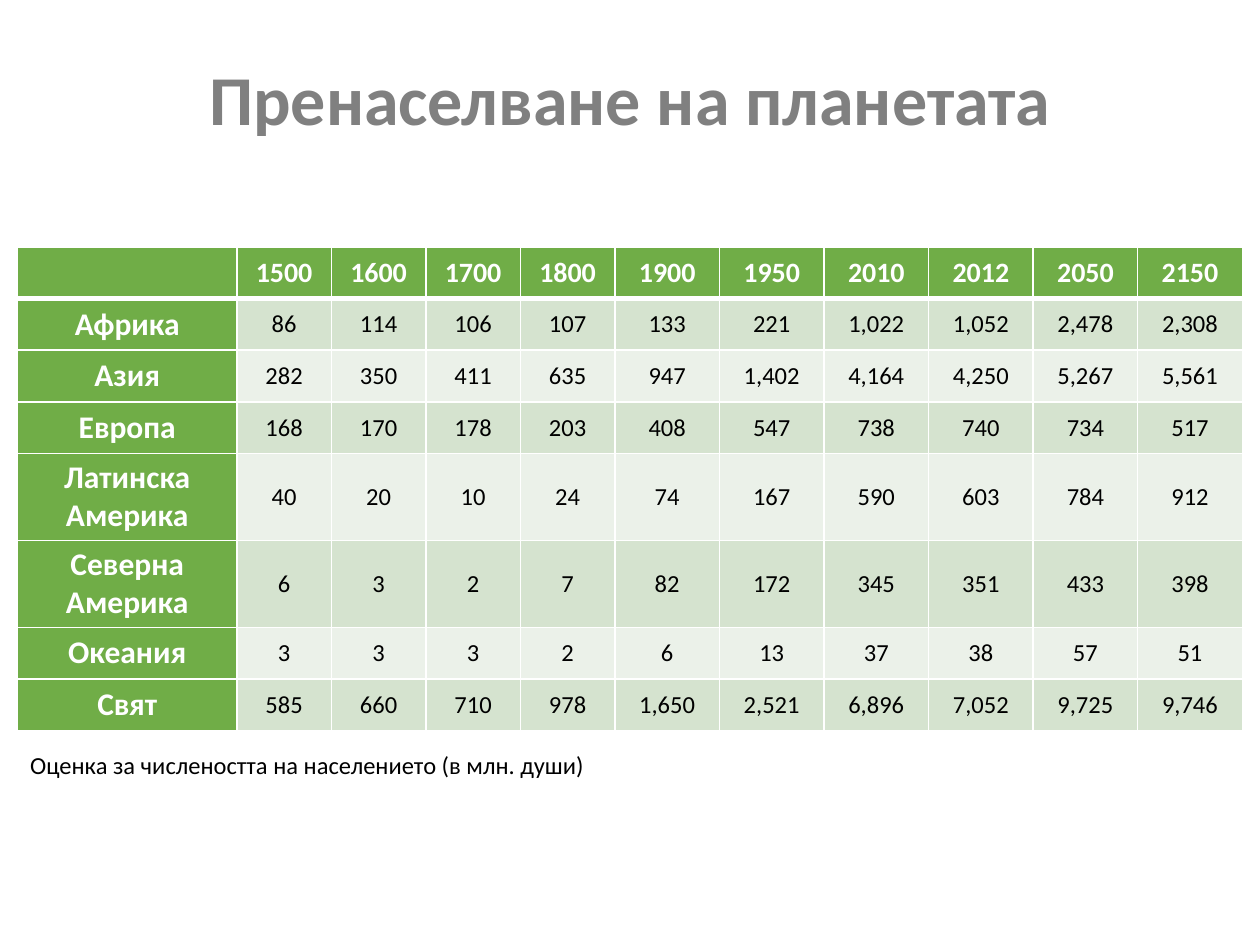
"""Build a slide with a table of world population estimates by region."""
from dataclasses import dataclass

from lxml.etree import SubElement
from pptx import Presentation
from pptx.dml.color import RGBColor
from pptx.enum.text import MSO_ANCHOR as Anchor, PP_ALIGN as Align
from pptx.oxml.ns import qn
from pptx.util import Inches, Pt

FONT = "Calibri"
WHITE = RGBColor(0xFF, 0xFF, 0xFF)
BLACK = RGBColor(0x00, 0x00, 0x00)
GRAY = RGBColor(0x80, 0x80, 0x80)
GREEN = RGBColor(0x70, 0xAD, 0x47)
BANDS = (RGBColor(0xD5, 0xE3, 0xCF), RGBColor(0xEB, 0xF1, 0xE9))


@dataclass(frozen=True)
class TextStyle:
    size: int
    color: RGBColor
    bold: bool = False
    align: Align = Align.CENTER


@dataclass(frozen=True)
class Region:
    name: str
    population: str
    height: float = 0.41


TITLE = TextStyle(40, GRAY, True)
YEAR = TextStyle(16, WHITE, True)
REGION = TextStyle(18, WHITE, True)
VALUE = TextStyle(14, BLACK)
NOTE = TextStyle(14, BLACK, align=Align.LEFT)

HEADER = Region("", "1500 1600 1700 1800 1900 1950 2010 2012 2050 2150")
REGIONS = (
    Region("Африка", "86 114 106 107 133 221 1,022 1,052 2,478 2,308"),
    Region("Азия", "282 350 411 635 947 1,402 4,164 4,250 5,267 5,561"),
    Region("Европа", "168 170 178 203 408 547 738 740 734 517"),
    Region("Латинска Америка", "40 20 10 24 74 167 590 603 784 912", 0.69),
    Region("Северна Америка", "6 3 2 7 82 172 345 351 433 398", 0.69),
    Region("Океания", "3 3 3 2 6 13 37 38 57 51"),
    Region("Свят", "585 660 710 978 1,650 2,521 6,896 7,052 9,725 9,746"),
)
COLUMN_WIDTHS = [1.74] + [0.75] * 4 + [0.83] * 6


def write_text(frame, text: str, style: TextStyle) -> None:
    para = frame.paragraphs[0]
    para.alignment = style.align
    if text:
        span = para.add_run()
        span.text = text
        span.font.name = FONT
        span.font.size = Pt(style.size)
        span.font.bold = style.bold
        span.font.color.rgb = style.color


def add_text(page, left: float, top: float, width: float, height: float,
             text: str, style: TextStyle) -> None:
    box = page.shapes.add_textbox(Inches(left), Inches(top), Inches(width), Inches(height))
    box.text_frame.word_wrap = True
    write_text(box.text_frame, text, style)


def set_borders(cell, top: int, bottom: int) -> None:
    properties = cell._tc.get_or_add_tcPr()
    for side, points in (("L", 1), ("R", 1), ("T", top), ("B", bottom)):
        line = SubElement(properties, qn(f"a:ln{side}"), w=str(Pt(points)))
        fill = SubElement(line, qn("a:solidFill"))
        SubElement(fill, qn("a:srgbClr"), val=str(WHITE))


def fill_cell(cell, text: str, style: TextStyle, color: RGBColor, row: int) -> None:
    set_borders(cell, top=3 if row == 1 else 1, bottom=3 if row == 0 else 1)
    cell.fill.solid()
    cell.fill.fore_color.rgb = color
    cell.vertical_anchor = Anchor.MIDDLE
    cell.margin_left = cell.margin_right = Inches(0.07)
    cell.margin_top = cell.margin_bottom = 0
    write_text(cell.text_frame, text, style)


def add_population_table(page, left: float, top: float) -> None:
    rows = (HEADER, *REGIONS)
    height = sum(region.height for region in rows)
    table = page.shapes.add_table(
        len(rows), len(COLUMN_WIDTHS), Inches(left), Inches(top),
        Inches(sum(COLUMN_WIDTHS)), Inches(height)).table
    for column, width in zip(table.columns, COLUMN_WIDTHS):
        column.width = Inches(width)
    for index, region in enumerate(rows):
        table.rows[index].height = Inches(region.height)
        fill_cell(table.cell(index, 0), region.name, REGION, GREEN, index)
        style, color = (VALUE, BANDS[(index - 1) % 2]) if index else (YEAR, GREEN)
        for column, value in enumerate(region.population.split(), start=1):
            fill_cell(table.cell(index, column), value, style, color, index)


def main() -> None:
    deck = Presentation()
    deck.slide_width, deck.slide_height = Inches(10), Inches(7.5)
    page = deck.slides.add_slide(deck.slide_layouts[6])
    add_text(page, 1.46, 0.39, 7.08, 0.58, "Пренаселване на планетата", TITLE)
    add_population_table(page, 0.14, 1.96)
    add_text(page, 0.14, 5.9, 7.81, 0.34,
             "Оценка за числеността на населението (в млн. души)", NOTE)
    deck.save("out.pptx")


if __name__ == "__main__":
    main()
